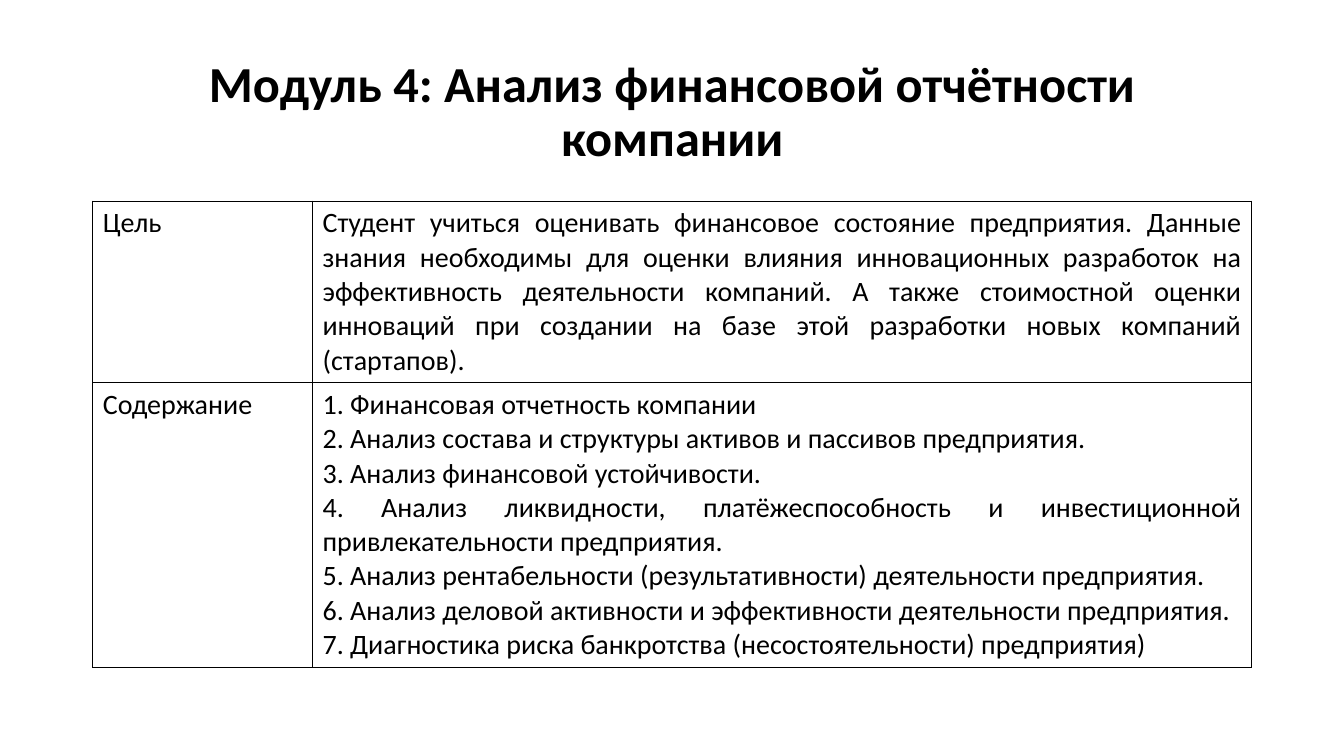
from dataclasses import dataclass

from lxml.etree import SubElement
from pptx import Presentation
from pptx.dml.color import RGBColor
from pptx.enum.text import MSO_ANCHOR as Anchor, MSO_AUTO_SIZE as AutoSize, PP_ALIGN as Align
from pptx.oxml.ns import qn
from pptx.slide import Slide
from pptx.table import _Cell as Cell
from pptx.text.text import _Paragraph as Paragraph
from pptx.util import Pt

COLORS = {"text": "000000", "border": "000000"}
FONT = "Calibri"
LEFT, WIDTH = 66.25, 828
COL_WIDTHS = (157, 671)
TITLE = "Модуль 4: Анализ финансовой отчётности компании"


@dataclass(frozen=True)
class Section:
    """One table row: its label, its paragraphs and its height in points."""
    label: str
    lines: tuple[str, ...]
    height: float


SECTIONS = (
    Section("Цель", (
        "Студент учиться оценивать финансовое состояние предприятия. "
        "Данные знания необходимы для оценки влияния инновационных разработок "
        "на эффективность деятельности компаний. А также стоимостной оценки "
        "инноваций при создании на базе этой разработки новых компаний (стартапов).",
    ), 129),
    Section("Содержание", (
        "1. Финансовая отчетность компании",
        "2. Анализ состава и структуры активов и пассивов предприятия.",
        "3. Анализ финансовой устойчивости.",
        "4. Анализ ликвидности, платёжеспособность и инвестиционной "
        "привлекательности предприятия.",
        "5. Анализ рентабельности (результативности) деятельности предприятия.",
        "6. Анализ деловой активности и эффективности деятельности предприятия.",
        "7. Диагностика риска банкротства (несостоятельности) предприятия)",
    ), 202),
)


def add_text(p: Paragraph, text: str, size: float, align: Align, bold: bool = False) -> None:
    """Add one formatted run to a paragraph."""
    p.alignment = align
    r = p.add_run()
    r.text = text
    r.font.name = FONT
    r.font.size = Pt(size)
    r.font.bold = bold
    r.font.color.rgb = RGBColor.from_string(COLORS["text"])


def add_borders(cell: Cell) -> None:
    """Draw a one-point line on each side of a cell."""
    tc_pr = cell._tc.get_or_add_tcPr()
    for side in ("lnL", "lnR", "lnT", "lnB"):
        ln = SubElement(tc_pr, qn(f"a:{side}"), w=str(Pt(1)))
        fill = SubElement(ln, qn("a:solidFill"))
        SubElement(fill, qn("a:srgbClr"), val=COLORS["border"])


def fill_cell(cell: Cell, lines: tuple[str, ...], align: Align) -> None:
    """Format a cell and write its paragraphs."""
    add_borders(cell)
    cell.fill.background()
    tf = cell.text_frame
    for i, line in enumerate(lines):
        p = tf.add_paragraph() if i else tf.paragraphs[0]
        add_text(p, line, 20, align)


def add_title(s: Slide) -> None:
    """Place and fill the title placeholder."""
    sp = s.shapes.title
    sp.left, sp.top, sp.width, sp.height = Pt(LEFT), Pt(28.75), Pt(WIDTH), Pt(104.4)
    tf = sp.text_frame
    tf.word_wrap = True
    tf.auto_size = AutoSize.NONE
    tf.vertical_anchor = Anchor.MIDDLE
    p = tf.paragraphs[0]
    p.line_spacing = 0.9
    add_text(p, TITLE, 36, Align.CENTER, bold=True)


def add_sections(s: Slide) -> None:
    """Build the table of module sections."""
    height = sum(section.height for section in SECTIONS)
    table = s.shapes.add_table(len(SECTIONS), len(COL_WIDTHS), Pt(LEFT), Pt(143.75),
                               Pt(WIDTH), Pt(height)).table
    table.first_row = table.horz_banding = False
    for col, width in zip(table.columns, COL_WIDTHS):
        col.width = Pt(width)
    for row, section in zip(table.rows, SECTIONS):
        row.height = Pt(section.height)
        label, content = row.cells
        fill_cell(label, (section.label,), Align.LEFT)
        fill_cell(content, section.lines, Align.JUSTIFY)


def main() -> None:
    """Build and save the slide."""
    prs = Presentation()
    prs.slide_width, prs.slide_height = Pt(960), Pt(540)
    s = prs.slides.add_slide(prs.slide_layouts.get_by_name("Title Only"))
    add_title(s)
    add_sections(s)
    prs.save("out.pptx")


if __name__ == "__main__":
    main()
